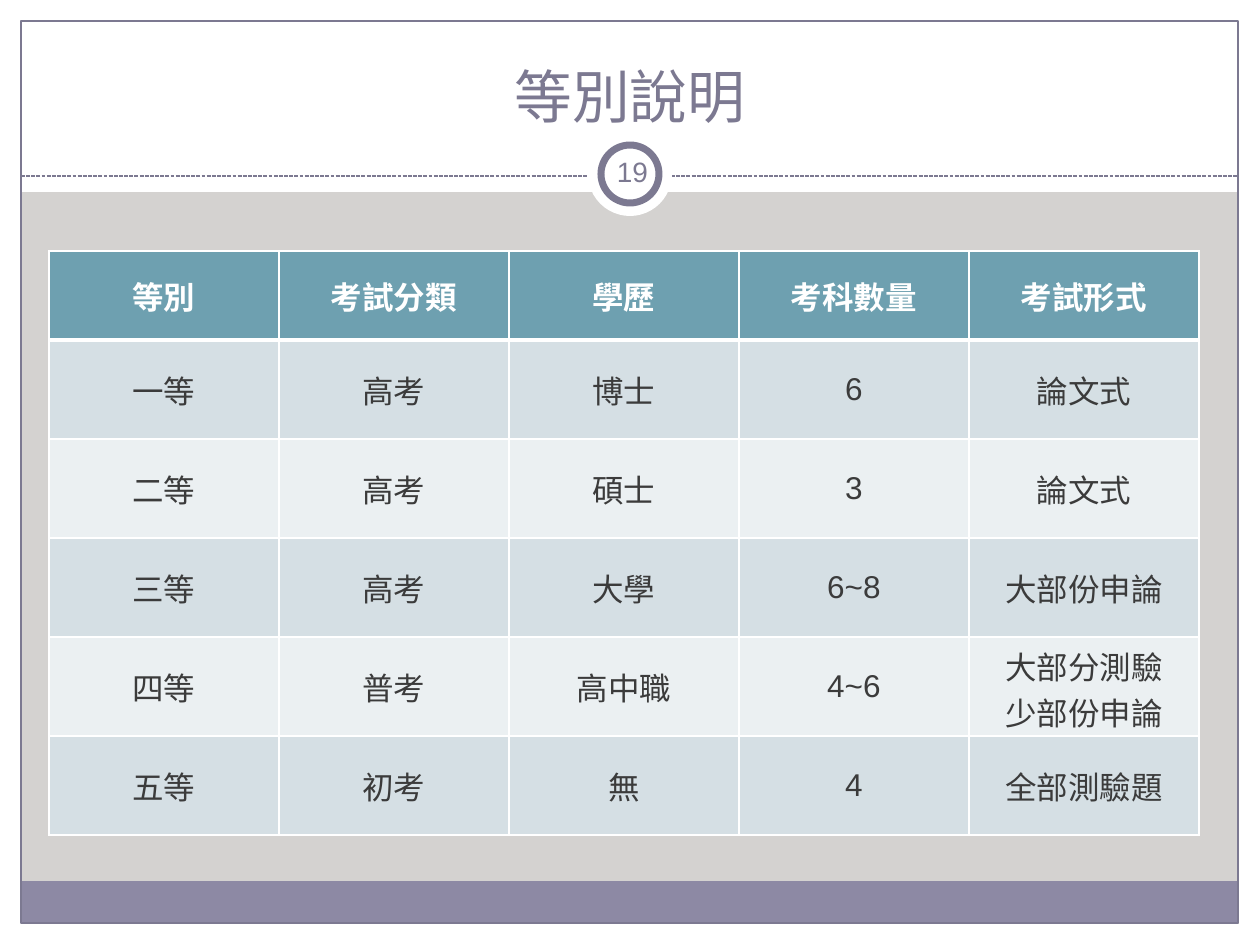
from lxml import etree
from pptx import Presentation
from pptx.dml.color import RGBColor
from pptx.enum.dml import MSO_LINE
from pptx.enum.shapes import MSO_CONNECTOR, MSO_SHAPE
from pptx.enum.text import MSO_ANCHOR, PP_ALIGN
from pptx.oxml.ns import qn
from pptx.util import Emu, Pt

RECT, OVAL = MSO_SHAPE.RECTANGLE, MSO_SHAPE.OVAL
STRAIGHT = MSO_CONNECTOR.STRAIGHT
DASH = MSO_LINE.SQUARE_DOT
CENTER = PP_ALIGN.CENTER
MIDDLE, BOTTOM = MSO_ANCHOR.MIDDLE, MSO_ANCHOR.BOTTOM

SCALE = 914400 / 126
FONT = "Arial"
COLORS = {
    "backdrop": "D4D2D0",
    "white": "FFFFFF",
    "accent": "7C7991",
    "footer": "8D89A4",
    "header": "6EA0B0",
    "band": "D5DFE4",
    "plain": "EBF0F2",
    "text": "3B3B3B",
}
ROWS = [
    ["等別", "考試分類", "學歷", "考科數量", "考試形式"],
    ["一等", "高考", "博士", "6", "論文式"],
    ["二等", "高考", "碩士", "3", "論文式"],
    ["三等", "高考", "大學", "6~8", "大部份申論"],
    ["四等", "普考", "高中職", "4~6", "大部分測驗\n少部份申論"],
    ["五等", "初考", "無", "4", "全部測驗題"],
]


def px(*values):
    return [Emu(round(v * SCALE)) for v in values]


def rgb(name):
    return RGBColor.from_string(COLORS[name])


class Deck:
    def __init__(self, width, height):
        self.prs = Presentation()
        self.prs.slide_width, self.prs.slide_height = px(width, height)
        self.s = self.prs.slides.add_slide(self.prs.slide_layouts[6])

    def background(self, color):
        fill = self.s.background.fill
        fill.solid()
        fill.fore_color.rgb = rgb(color)

    def shape(self, kind, box, fill=None, line=None, weight=0.75):
        sp = self.s.shapes.add_shape(kind, *px(*box))
        sp.shadow.inherit = False
        if fill:
            sp.fill.solid()
            sp.fill.fore_color.rgb = rgb(fill)
        else:
            sp.fill.background()
        if line:
            sp.line.color.rgb = rgb(line)
            sp.line.width = Pt(weight)
        else:
            sp.line.fill.background()

    def dashed_line(self, x1, y1, x2, y2, color):
        ln = self.s.shapes.add_connector(STRAIGHT, *px(x1, y1, x2, y2))
        ln.line.color.rgb = rgb(color)
        ln.line.width = Pt(0.75)
        ln.line.dash_style = DASH
        etree.SubElement(ln._element.spPr, qn("a:effectLst"))

    def format_text(self, tf, size, color, bold=False):
        for p in tf.paragraphs:
            p.alignment = CENTER
            for r in p.runs:
                r.font.name = FONT
                r.font.size = Pt(size)
                r.font.bold = bold
                r.font.color.rgb = rgb(color)

    def text(self, text, box, size, color, anchor, inset=6):
        tf = self.s.shapes.add_textbox(*px(*box)).text_frame
        tf.word_wrap = True
        tf.vertical_anchor = anchor
        tf.margin_left = tf.margin_right = tf.margin_top = tf.margin_bottom = px(inset)[0]
        tf.text = text
        self.format_text(tf, size, color)

    def border(self, cell, side, weight):
        ln = etree.SubElement(cell._tc.get_or_add_tcPr(), qn("a:" + side), w=str(Pt(weight)))
        fill = etree.SubElement(ln, qn("a:solidFill"))
        etree.SubElement(fill, qn("a:srgbClr"), val=COLORS["white"])

    def table(self, rows, x, y, col_width, head_height, row_height):
        cols = len(rows[0])
        heights = [head_height] + [row_height] * (len(rows) - 1)
        box = px(x, y, col_width * cols, sum(heights))
        table = self.s.shapes.add_table(len(rows), cols, *box).table
        for col in table.columns:
            col.width = px(col_width)[0]
        for i, (values, height) in enumerate(zip(rows, heights)):
            table.rows[i].height = px(height)[0]
            head = i == 0
            fill = "header" if head else "band" if i % 2 else "plain"
            for j, value in enumerate(values):
                cell = table.cell(i, j)
                cell.text_frame.text = value
                cell.vertical_anchor = MIDDLE
                self.format_text(cell.text_frame, 18, "white" if head else "text", head)
                for side in ("lnL", "lnR"):
                    self.border(cell, side, 1)
                self.border(cell, "lnT", 3 if i == 1 else 1)
                self.border(cell, "lnB", 3 if head else 1)
                cell.fill.solid()
                cell.fill.fore_color.rgb = rgb(fill)


def main():
    deck = Deck(1260, 945)
    deck.background("backdrop")
    for box in ((0, 924, 1260, 21), (0, 0, 1260, 192), (0, 0, 21, 945), (1239, 0, 21, 945)):
        deck.shape(RECT, box, "white")
    deck.shape(RECT, (21, 881, 1217, 43), "footer")
    deck.shape(RECT, (21, 21, 1217, 902), line="accent")
    deck.dashed_line(21, 176, 1238, 176, "accent")
    deck.shape(OVAL, (588, 132, 84, 84), "white")
    deck.shape(OVAL, (601, 145, 58, 58), "white", "accent", 4)
    deck.text("等別說明", (42, 31, 1176, 105), 33, "accent", BOTTOM)
    deck.table(ROWS, 49, 251, 230, 89, 99)
    deck.text("19", (601, 141, 63, 61), 16, "accent", MIDDLE)
    deck.prs.save("out.pptx")


if __name__ == "__main__":
    main()
